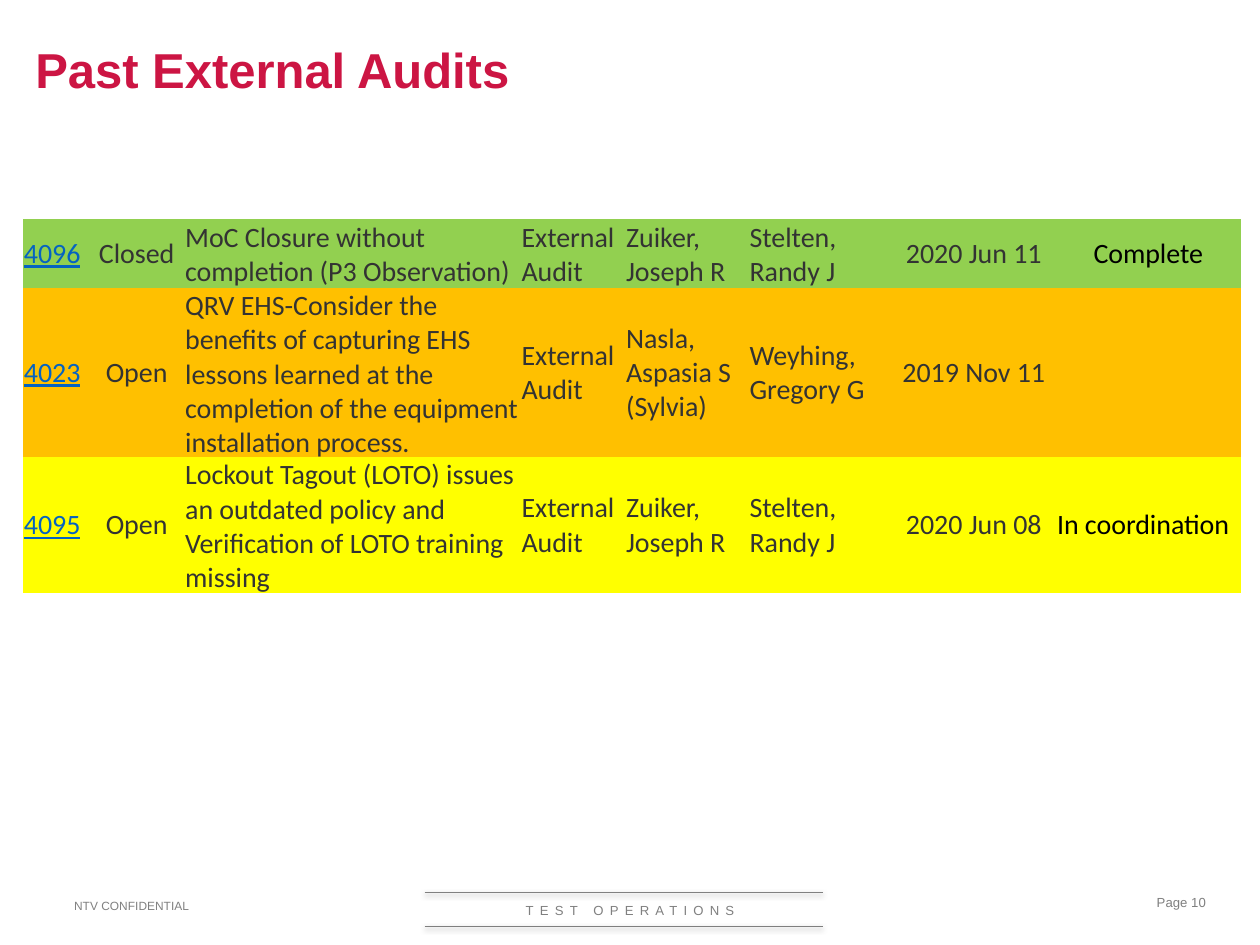
from dataclasses import dataclass

import pptx
import pptx.dml.color
import pptx.enum.shapes
import pptx.enum.text
import pptx.oxml
import pptx.oxml.ns
import pptx.util

WIDTH, HEIGHT = 10, 7.5
COLORS = {
    "title": "CC1543", "footer": "808080", "page": "7F7F7F",
    "link": "0563C1", "text": "333333", "status": "000000",
    "closed": "92D050", "late": "FFC000", "active": "FFFF00",
}
PLAIN_TABLE = "{2D5ABB26-0587-4C30-8999-92F81FD0307C}"
SHADOW = (
    f'<a:effectLst {pptx.oxml.ns.nsdecls("a")}>'
    '<a:outerShdw blurRad="39370" dist="20320" dir="5400000" rotWithShape="0">'
    '<a:srgbClr val="000000"><a:alpha val="38000"/></a:srgbClr>'
    '</a:outerShdw></a:effectLst>'
)
ALIGN = pptx.enum.text.PP_ALIGN
ANCHOR = pptx.enum.text.MSO_ANCHOR


@dataclass
class Column:
    width: float
    align: ALIGN = ALIGN.LEFT
    color: str = "text"
    underline: bool = False


@dataclass
class Audit:
    height: float
    fill: str
    values: tuple
    status_align: ALIGN = ALIGN.LEFT


@dataclass
class Label:
    text: str
    left: float  # lengths are shares of the slide
    top: float
    width: float
    height: float
    size: float
    color: str
    align: ALIGN
    anchor: ANCHOR = ANCHOR.MIDDLE
    spacing: int = 0


COLUMNS = [
    Column(0.53, color="link", underline=True),
    Column(0.75, ALIGN.CENTER),
    Column(2.67),
    Column(0.83),
    Column(0.98),
    Column(1.14),
    Column(1.3, ALIGN.CENTER),
    Column(1.47, color="status"),
]
AUDITS = [
    Audit(0.36, "closed", (
        "4096", "Closed", "MoC Closure without completion (P3 Observation)",
        "External Audit", "Zuiker, Joseph R", "Stelten, Randy J",
        "2020 Jun 11", "Complete"), ALIGN.CENTER),
    Audit(0.71, "late", (
        "4023", "Open",
        "QRV EHS-Consider the benefits of capturing EHS lessons learned at "
        "the completion of the equipment installation process.",
        "External Audit", "Nasla, Aspasia S (Sylvia)", "Weyhing, Gregory G",
        "2019 Nov 11", "")),
    Audit(0.87, "active", (
        "4095", "Open",
        "Lockout Tagout (LOTO) issues an outdated policy and Verification "
        "of LOTO training missing",
        "External Audit", "Zuiker, Joseph R", "Stelten, Randy J",
        "2020 Jun 08", "In coordination")),
]
LABELS = [
    Label("Page 10", 0.66, 0.94, 0.307, 0.036, 7.5, "page", ALIGN.RIGHT, ANCHOR.TOP),
    Label("NTV CONFIDENTIAL", 0.049, 0.94, 0.163, 0.036, 6.8, "footer", ALIGN.LEFT),
    Label("TEST OPERATIONS", 0.268, 0.948, 0.464, 0.031, 7.5, "footer",
          ALIGN.CENTER, spacing=350),
]
RULES = [(0.98, "page"), (0.944, "footer")]


def across(share: float) -> int:
    return pptx.util.Inches(WIDTH * share)


def down(share: float) -> int:
    return pptx.util.Inches(HEIGHT * share)


def rgb(name: str) -> pptx.dml.color.RGBColor:
    return pptx.dml.color.RGBColor.from_string(COLORS[name])


def add_span(para, text: str, size: float, color: str, face: str = "Arial"):
    span = para.add_run()
    span.text = text
    span.font.size = pptx.util.Pt(size)
    span.font.name = face
    span.font.color.rgb = rgb(color)
    return span


def add_label(slide, label: Label) -> None:
    box = slide.shapes.add_textbox(across(label.left), down(label.top),
                                   across(label.width), down(label.height))
    frame = box.text_frame
    frame.word_wrap = True
    frame.vertical_anchor = label.anchor
    para = frame.paragraphs[0]
    para.alignment = label.align
    span = add_span(para, label.text, label.size, label.color)
    if label.spacing:
        span.font._element.set("spc", str(label.spacing))


def add_rule(slide, top: float, color: str) -> None:
    rule = slide.shapes.add_connector(
        pptx.enum.shapes.MSO_CONNECTOR.STRAIGHT,
        across(0.337), down(top), across(0.653), down(top))
    rule.line.color.rgb = rgb(color)
    rule.line.width = pptx.util.Pt(0.5)
    rule._element.spPr.append(pptx.oxml.parse_xml(SHADOW))


def add_title(slide, text: str) -> None:
    title = slide.shapes.title
    title.left, title.top = across(0.018), down(0.009)
    title.width, title.height = across(0.869), down(0.127)
    frame = title.text_frame
    frame.auto_size = pptx.enum.text.MSO_AUTO_SIZE.NONE
    frame.vertical_anchor = ANCHOR.MIDDLE
    para = frame.paragraphs[0]
    para.alignment = ALIGN.LEFT
    add_span(para, text, 28, "title").font.bold = True


def fill_cell(cell, text: str, column: Column, align: ALIGN, fill: str) -> None:
    cell.fill.solid()
    cell.fill.fore_color.rgb = rgb(fill)
    if not text:
        return
    cell.vertical_anchor = ANCHOR.MIDDLE
    cell.margin_left = cell.margin_right = cell.margin_top = pptx.util.Inches(0.01)
    cell.margin_bottom = 0
    para = cell.text_frame.paragraphs[0]
    para.alignment = align
    span = add_span(para, text, 16, column.color, "Calibri")
    span.font.underline = column.underline


def add_audits(slide) -> None:
    holder = slide.shapes.add_table(len(AUDITS), len(COLUMNS), across(0.018),
                                    down(0.232), across(0.968), down(0.393))
    table = holder.table
    table.first_row = table.horz_banding = False
    table._tbl.tblPr.find(pptx.oxml.ns.qn("a:tableStyleId")).text = PLAIN_TABLE
    for place, column in zip(table.columns, COLUMNS):
        place.width = pptx.util.Inches(column.width)
    for row, audit in zip(table.rows, AUDITS):
        row.height = pptx.util.Inches(audit.height)
        for cell, text, column in zip(row.cells, audit.values, COLUMNS):
            align = audit.status_align if column is COLUMNS[-1] else column.align
            fill_cell(cell, text, column, align, audit.fill)
    holder.height = down(0.393)


def main() -> None:
    deck = pptx.Presentation()
    deck.slide_width = pptx.util.Inches(WIDTH)
    deck.slide_height = pptx.util.Inches(HEIGHT)
    slide = deck.slides.add_slide(deck.slide_layouts[5])

    # Footer
    for label in LABELS:
        add_label(slide, label)
    for top, color in RULES:
        add_rule(slide, top, color)

    # Title and audit table
    add_title(slide, "Past External Audits")
    add_audits(slide)
    deck.save("out.pptx")


if __name__ == "__main__":
    main()
